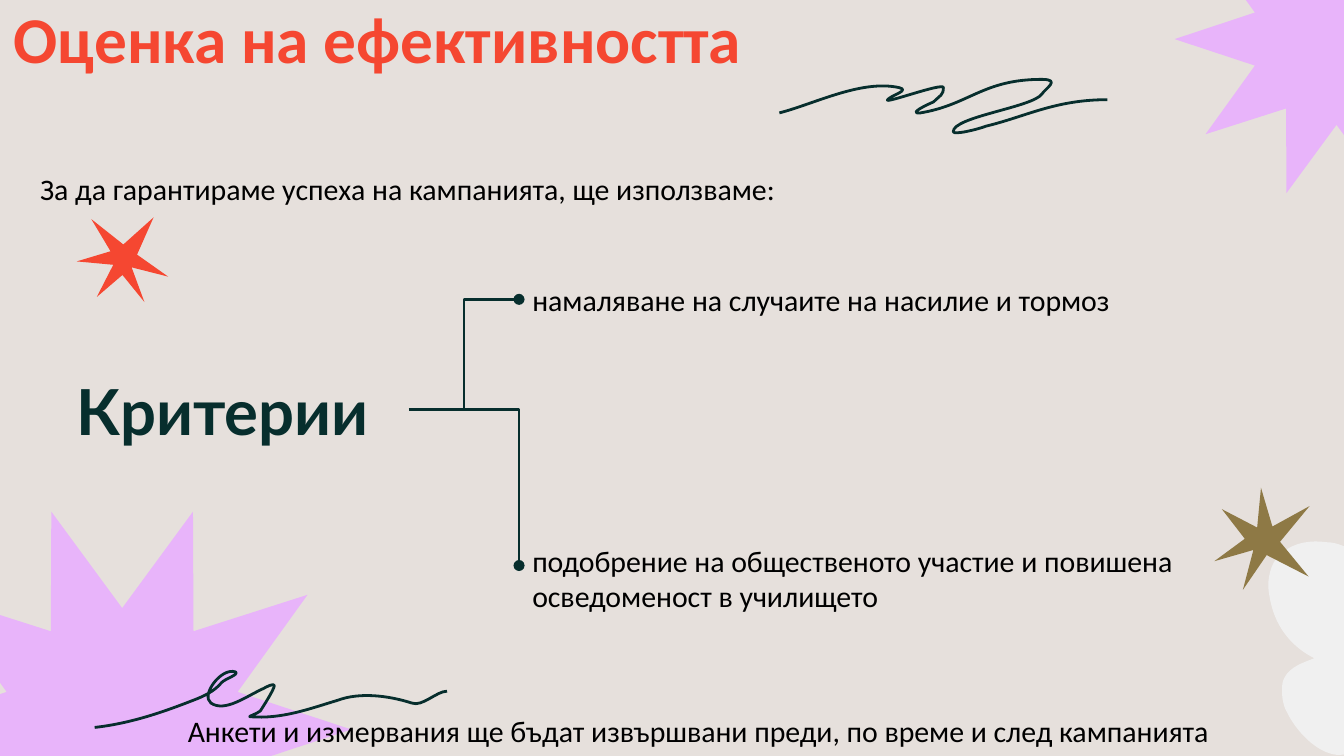
from dataclasses import dataclass
from math import cos, pi, sin

from lxml.etree import SubElement
from pptx import Presentation
from pptx.dml.color import RGBColor
from pptx.enum.shapes import MSO_CONNECTOR
from pptx.enum.text import MSO_ANCHOR, MSO_AUTO_SIZE, PP_ALIGN
from pptx.oxml.ns import qn
from pptx.util import Cm, Pt


@dataclass(frozen=True)
class Theme:
    paper: str = "E6E0DC"
    lilac: str = "E8B4FA"
    white: str = "F0F0F0"
    red: str = "F54731"
    gold: str = "8E7945"
    ink: str = "072E2D"
    black: str = "000000"
    title_size: int = 35
    heading_size: int = 34
    body_size: int = 16
    body_font: str = "Calibri"
    heading_font: str = "Lato"
    stroke: float = 1.5


@dataclass(frozen=True)
class Box:
    """A region in centimetres."""
    left: float
    top: float
    width: float
    height: float

    def inner(self, left, top, width, height):
        return Box(self.left + left, self.top + top, width, height)

    def at(self, x, y):
        """Slide position of a point given in percent of the box."""
        return (Cm(self.left + self.width * x / 100),
                Cm(self.top + self.height * y / 100))

    def emu(self):
        return Cm(self.left), Cm(self.top), Cm(self.width), Cm(self.height)


THEME = Theme()
PAGE = Box(0, 0, 25.4, 14.29)

# Outlines in percent of their boxes; curves are a start, then cubic triples
RED_STAR = [(84, 0), (51, 32), (16, 2), (37, 40), (0, 52), (40, 56),
            (22, 94), (50, 68), (74, 100), (60, 59), (100, 70), (66, 44)]
GOLD_STAR = [(99, 87), (69, 53), (100, 18), (61, 38), (49, 0), (45, 39),
             (8, 21), (32, 50), (0, 72), (41, 61), (30, 100), (55, 66)]
PETALS = [(100, 4), (92, 2.5), (82, 1), (72, 1), (52, 0), (32, 1), (17, 6),
          (5, 9), (0, 16), (0, 21), (0, 24), (2, 27), (3, 29), (10, 41),
          (30, 50), (57, 55), (43, 57), (27, 59), (20, 64), (17, 66),
          (17, 68), (17, 70), (17, 73), (18, 77), (23, 80), (33, 88),
          (58, 99), (85, 100), (90, 100), (95, 100), (100, 99)]
TOP_SCRIBBLE = [(0, 61), (11, 44), (25, 0), (36.5, 15), (40, 20), (34, 29),
                (33, 37), (31.5, 46), (50, 5), (50, 15), (50, 29), (49, 29),
                (47, 41), (45, 46), (39, 63), (43, 61), (58, 46), (62, 0),
                (80, 0), (86, 0), (81, 17), (80, 27), (77, 51), (53, 68),
                (53, 95), (53, 102), (61, 90), (63, 85), (75, 68), (84, 37),
                (100, 37)]
LOW_SCRIBBLE = [(0, 100), (10, 93), (19, 74), (28, 52), (31, 45), (34, 36),
                (36, 21), (37, 14), (41, 7), (40, 2), (36, -7), (30, 43),
                (33, 57), (37, 74), (43, 45), (48, 31), (48.5, 29), (51, 21),
                (51, 26), (51, 33), (47, 71), (47, 71), (46, 76), (43.5, 81),
                (44, 81), (53, 86), (61, 67), (69, 52), (75, 38), (83, 43),
                (90, 57), (93, 64), (97, 36), (100, 36)]


def rgb(color):
    return RGBColor.from_string(color)


def burst(spikes=10, inner=0.53):
    """Regular star whose top notch points straight up."""
    radii = (50 * inner, 50)
    return [(50 + radii[i % 2] * sin(pi * i / spikes),
             50 - radii[i % 2] * cos(pi * i / spikes))
            for i in range(2 * spikes)]


def bend(drawing):
    """Join each three line segments into one cubic curve."""
    track = drawing._element.spPr.find(".//" + qn("a:path"))
    lines = track.findall(qn("a:lnTo"))
    for i in range(0, len(lines), 3):
        cubic = SubElement(track, qn("a:cubicBezTo"))
        for line in lines[i:i + 3]:
            cubic.append(line[0])
            track.remove(line)
    for close in track.findall(qn("a:close")):
        track.append(close)


def outline(slide, box, points, fill=None, curved=False):
    """Filled closed shape, or an open ink stroke when no fill is given."""
    start, *rest = [box.at(x, y) for x, y in points]
    builder = slide.shapes.build_freeform(*start)
    builder.add_line_segments(rest, close=False)
    drawing = builder.convert_to_shape()
    if curved:
        bend(drawing)
    drawing.shadow.inherit = False
    if fill:
        SubElement(drawing._element.spPr.find(".//" + qn("a:path")), qn("a:close"))
        drawing.fill.solid()
        drawing.fill.fore_color.rgb = rgb(fill)
        drawing.line.fill.background()
    else:
        drawing.fill.background()
        drawing.line.color.rgb = rgb(THEME.ink)
        drawing.line.width = Pt(THEME.stroke)


def write(holder, text, size, color=THEME.black, font=THEME.body_font,
          bold=False, anchor=MSO_ANCHOR.TOP, inset=0.25):
    frame = holder.text_frame
    frame.word_wrap = True
    frame.auto_size = MSO_AUTO_SIZE.NONE
    frame.vertical_anchor = anchor
    frame.margin_left = frame.margin_right = Cm(0.25)
    frame.margin_top = frame.margin_bottom = Cm(inset)
    paragraph = frame.paragraphs[0]
    paragraph.alignment = PP_ALIGN.LEFT
    run = paragraph.add_run()
    run.text = text
    run.font.name = font
    run.font.size = Pt(size)
    run.font.bold = bold
    run.font.color.rgb = rgb(color)


def label(slide, box, text, size=THEME.body_size, **style):
    write(slide.shapes.add_textbox(*box.emu()), text, size, **style)


def branch(slide, start, end, preset):
    """Elbow connector ending in a dot."""
    elbow = slide.shapes.add_connector(
        MSO_CONNECTOR.ELBOW, *map(Cm, start), *map(Cm, end))
    elbow.line.color.rgb = rgb(THEME.ink)
    elbow.line.width = Pt(THEME.stroke)
    properties = elbow._element.spPr
    properties.find(qn("a:prstGeom")).set("prst", preset)
    SubElement(properties.find(qn("a:ln")), qn("a:tailEnd"), type="oval")
    SubElement(properties, qn("a:effectLst"))


def add_decoration(slide, box):
    outline(slide, box.inner(-2.02, 9.46, 8.66, 8.66), burst(), THEME.lilac)
    outline(slide, box.inner(22.2, -2.32, 6.12, 6.12), burst(), THEME.lilac)
    outline(slide, box.inner(23.97, 10.21, 1.53, 4.06), PETALS, THEME.white,
            curved=True)
    outline(slide, box.inner(1.45, 4.11, 1.73, 1.6), RED_STAR, THEME.red)
    outline(slide, box.inner(22.95, 9.22, 1.8, 1.93), GOLD_STAR, THEME.gold)
    outline(slide, box.inner(1.79, 12.68, 6.66, 1.07), LOW_SCRIBBLE, curved=True)
    outline(slide, box.inner(14.73, 1.5, 6.2, 1.04), TOP_SCRIBBLE, curved=True)


def add_title(slide, box):
    title = slide.shapes.title
    title.left, title.top, title.width, title.height = box.emu()
    write(title, "Оценка на ефективността", THEME.title_size, THEME.red,
          bold=True, anchor=MSO_ANCHOR.MIDDLE)


def add_criteria(slide, box):
    # Heading and its two branches
    label(slide, box.inner(0, 1.49, 6.53, 2.21), "Критерии", THEME.heading_size,
          color=THEME.ink, font=THEME.heading_font, bold=True,
          anchor=MSO_ANCHOR.MIDDLE)
    fork = (box.left + 6.53, box.top + 2.58)
    tip = box.left + 8.61
    branch(slide, fork, (tip, box.top + 0.5), "bentConnector3")
    branch(slide, fork, (tip, box.top + 5.53), "bentConnector2")
    # Criteria at the branch tips
    label(slide, box.inner(8.61, 0, 14.33, 1.02),
          "намаляване на случаите на насилие и тормоз", anchor=MSO_ANCHOR.MIDDLE)
    label(slide, box.inner(8.61, 4.84, 14.05, 1.65),
          "подобрение на общественото участие и повишена осведоменост в училището")


def main():
    deck = Presentation()
    deck.slide_width, deck.slide_height = Cm(PAGE.width), Cm(PAGE.height)
    slide = deck.slides.add_slide(deck.slide_layouts.get_by_name("Title Only"))
    slide.background.fill.solid()
    slide.background.fill.fore_color.rgb = rgb(THEME.paper)

    add_decoration(slide, PAGE)
    add_title(slide, PAGE.inner(0.01, -0.1, 21.41, 1.6))
    add_criteria(slide, PAGE.inner(1.2, 5.16, 22.95, 6.49))
    # Lead-in and closing sentences
    label(slide, PAGE.inner(0.51, 3.09, 15.6, 0.94),
          "За да гарантираме успеха на кампанията, ще използваме:", inset=0.13)
    label(slide, PAGE.inner(3.3, 13.34, 20.27, 0.94),
          "Анкети и измервания ще бъдат извършвани преди, по време и след кампанията",
          inset=0.13)
    deck.save("out.pptx")


if __name__ == "__main__":
    main()
